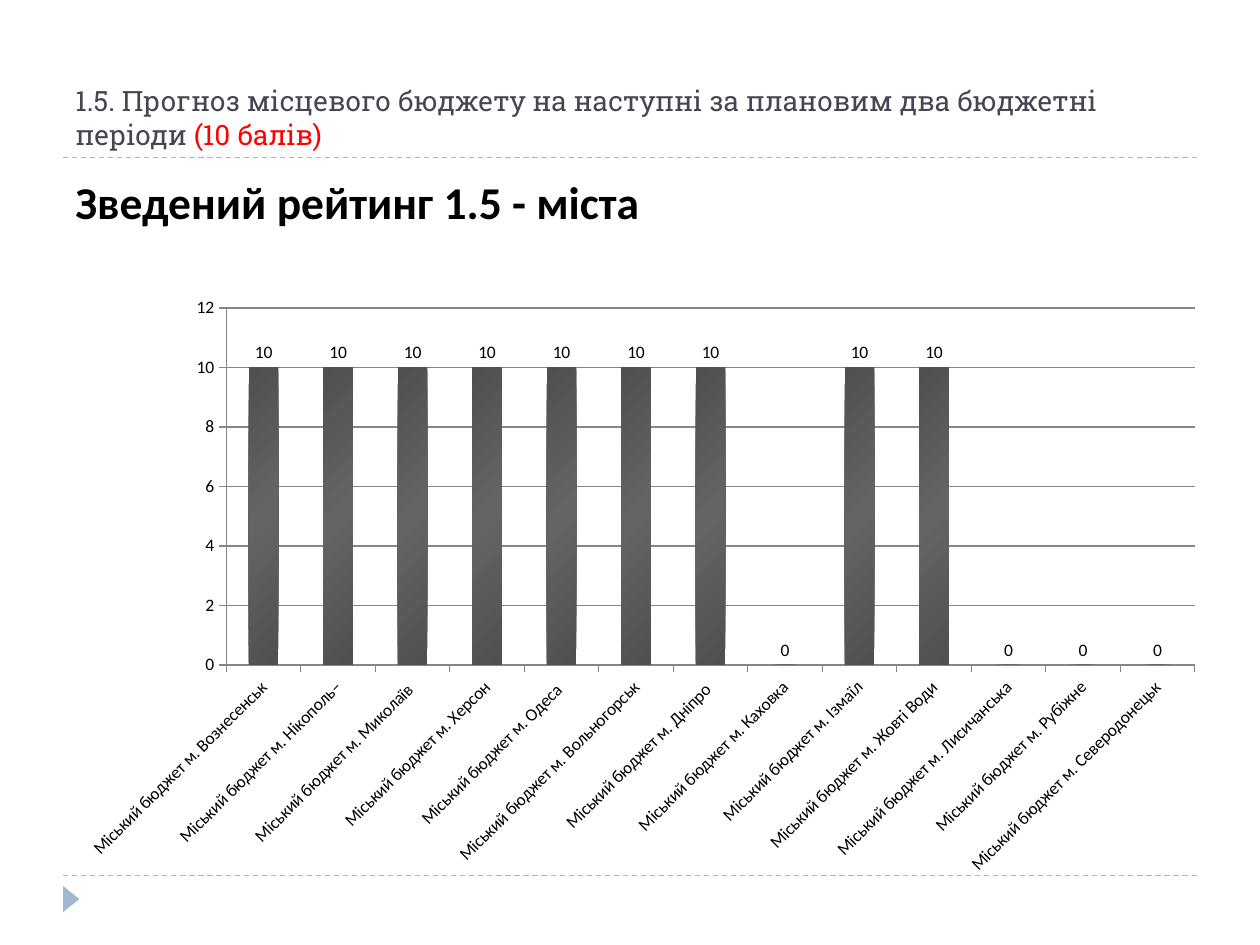
from copy import deepcopy

from lxml import etree
from pptx import Presentation
from pptx.chart.data import CategoryChartData
from pptx.dml.color import RGBColor
from pptx.enum.chart import XL_CHART_TYPE, XL_LABEL_POSITION, XL_TICK_MARK
from pptx.enum.dml import MSO_LINE
from pptx.enum.shapes import MSO_CONNECTOR, MSO_SHAPE
from pptx.enum.text import MSO_ANCHOR
from pptx.oxml import parse_xml
from pptx.oxml.ns import nsdecls, qn
from pptx.util import Cm, Pt

# Some names end in a space, which sets their rotated labels back a little
CITIES = ["Вознесенськ", "Нікополь–", "Миколаїв ", "Херсон", "Одеса ",
          "Вольногорськ", "Дніпро ", "Каховка", "Ізмаїл", "Жовті Води",
          "Лисичанська", "Рубіжне", "Северодонецьк"]
SCORES = [10, 10, 10, 10, 10, 10, 10, 0, 10, 10, 0, 0, 0]


def rgb(hex_color):
    return RGBColor.from_string(hex_color)


class SlideBuilder:
    accent, gray, black = "9FB8CD", "868686", "000000"
    bar_dark, bar_light = "505050", "646464"
    title_font, body_font = "Roboto Slab", "Calibri"

    def __init__(self, slide):
        self.s = slide

    def rule(self, y):
        ln = self.s.shapes.add_connector(
            MSO_CONNECTOR.STRAIGHT, Cm(1.27), Cm(y), Cm(24.13), Cm(y))
        ln.line.color.rgb = rgb(self.accent)
        ln.line.width = Pt(0.75)
        ln.line.dash_style = MSO_LINE.DASH
        etree.SubElement(ln._element.spPr, qn("a:effectLst"))

    def marker(self, x, y, w, h):
        sp = self.s.shapes.add_shape(
            MSO_SHAPE.ISOSCELES_TRIANGLE, Cm(x), Cm(y), Cm(w), Cm(h))
        sp.rotation = 90
        sp.shadow.inherit = False
        sp.fill.solid()
        sp.fill.fore_color.rgb = rgb(self.accent)
        sp.line.fill.background()

    def text(self, x, y, w, h, runs, size, font, bold=False,
             anchor=MSO_ANCHOR.TOP, before=0):
        tf = self.s.shapes.add_textbox(Cm(x), Cm(y), Cm(w), Cm(h)).text_frame
        tf.word_wrap = True
        tf.vertical_anchor = anchor
        p = tf.paragraphs[0]
        p.space_before = Pt(before)
        for content, color in runs:
            r = p.add_run()
            r.text = content
            r.font.size, r.font.name, r.font.bold = Pt(size), font, bold
            r.font.color.rgb = rgb(color)

    def column_chart(self, x, y, w, h, cats, vals):
        data = CategoryChartData()
        data.categories = cats
        data.add_series("Series 1", vals)
        chart = self.s.shapes.add_chart(
            XL_CHART_TYPE.COLUMN_CLUSTERED, Cm(x), Cm(y), Cm(w), Cm(h), data).chart
        chart.has_legend = chart.has_title = False
        chart.font.size, chart.font.name = Pt(10), self.body_font
        chart.font.color.rgb = rgb(self.black)

        # Axes
        for axis in (chart.category_axis, chart.value_axis):
            axis.major_tick_mark = XL_TICK_MARK.OUTSIDE
            axis.format.line.color.rgb = rgb(self.gray)
            axis.tick_labels.font.size = Pt(10)
        body = chart.category_axis._element.find(qn("c:txPr")).find(qn("a:bodyPr"))
        body.set("rot", "-2700000")
        body.set("vert", "horz")
        va = chart.value_axis
        va.minimum_scale, va.maximum_scale, va.major_unit = 0, 12, 2
        va.major_gridlines.format.line.color.rgb = rgb(self.gray)

        # Columns and their labels
        plot = chart.plots[0]
        plot.vary_by_categories = False
        plot.gap_width = 150
        self.shade(plot.series[0])
        plot.has_data_labels = True
        labels = plot.data_labels
        labels.show_value = True
        labels.position = XL_LABEL_POSITION.OUTSIDE_END
        labels.font.size = Pt(10)
        self.place_plot(chart, x=0.14, y=0.04, w=0.84, h=0.59)

    def shade(self, series):
        fill = series.format.fill
        fill.gradient()
        fill.gradient_angle = 315
        stops = series._element.spPr.find(qn("a:gradFill")).find(qn("a:gsLst"))
        stops.append(deepcopy(stops[-1]))
        shades = (self.bar_dark, self.bar_light, self.bar_dark)
        for stop, position, color in zip(fill.gradient_stops, (0, 0.5, 1), shades):
            stop.position = position
            stop.color.rgb = rgb(color)

    def place_plot(self, chart, **box):
        area = chart._chartSpace.find(qn("c:chart")).find(qn("c:plotArea"))
        for old in area.findall(qn("c:layout")):
            area.remove(old)
        values = "".join(f'<c:{k} val="{v}"/>' for k, v in box.items())
        area.insert(0, parse_xml(
            f'<c:layout {nsdecls("c")}><c:manualLayout>'
            '<c:layoutTarget val="inner"/><c:xMode val="edge"/><c:yMode val="edge"/>'
            f'{values}</c:manualLayout></c:layout>'))


def main():
    prs = Presentation()
    prs.slide_width, prs.slide_height = Cm(25.4), Cm(19.05)
    b = SlideBuilder(prs.slides.add_slide(prs.slide_layouts[6]))

    # Frame
    for y in (17.65, 3.18):
        b.rule(y)
    b.marker(1.17, 17.96, 0.53, 0.33)

    # Headings
    b.text(1.27, 0.43, 22.86, 2.74,
           [("1.5. Прогноз місцевого бюджету на наступні за плановим "
             "два бюджетні періоди ", "464653"), ("(10 балів)", "FF0000")],
           16, b.title_font, anchor=MSO_ANCHOR.BOTTOM)
    b.text(1.27, 3.38, 22.86, 13.72, [("Зведений рейтинг 1.5 - міста", b.black)],
           26, b.body_font, bold=True, before=6)

    # Rating chart
    b.column_chart(1.31, 5.72, 23.24, 12.2,
                   [f"Міський бюджет м. {city}" for city in CITIES], SCORES)
    prs.save("out.pptx")


if __name__ == "__main__":
    main()
